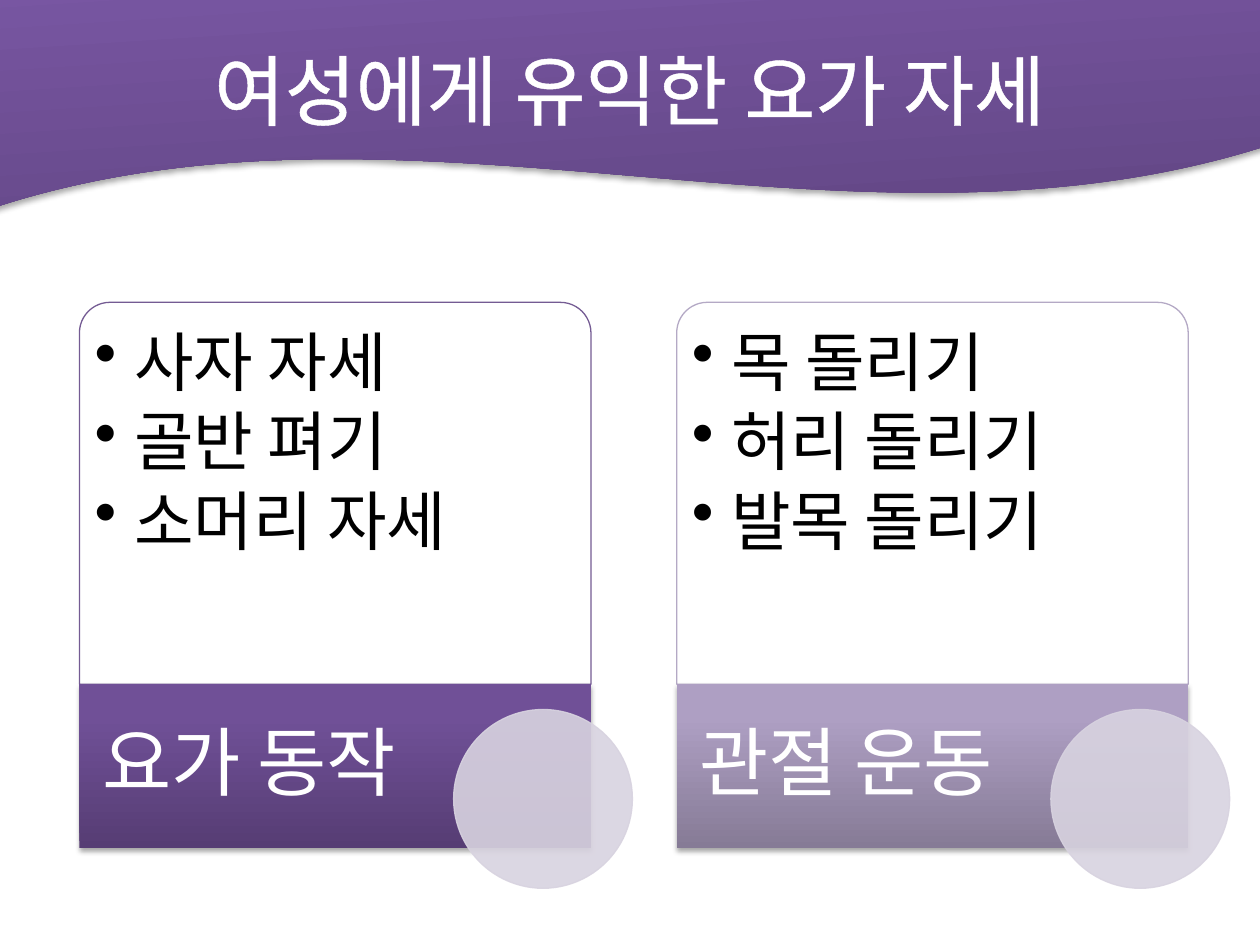
"""Build a slide with two cards of yoga poses under a purple wave title."""
from lxml import etree
from pptx import Presentation
from pptx.dml.color import RGBColor
from pptx.enum.shapes import MSO_SHAPE
from pptx.enum.text import MSO_ANCHOR, PP_ALIGN
from pptx.oxml import parse_xml
from pptx.oxml.ns import nsdecls, qn
from pptx.util import Pt

WAVE, RECT, OVAL = MSO_SHAPE.WAVE, MSO_SHAPE.RECTANGLE, MSO_SHAPE.OVAL
ROUND_TOP = MSO_SHAPE.ROUND_2_SAME_RECTANGLE
TOP, MIDDLE = MSO_ANCHOR.TOP, MSO_ANCHOR.MIDDLE
LEFT, CENTER = PP_ALIGN.LEFT, PP_ALIGN.CENTER
FONT = "Noto Sans CJK KR"
COLORS = {
    "white": "FFFFFF", "black": "000000", "circle": "D8D3E0",
    "purple_line": "745B93", "lilac_line": "B4A9C5",
}
GRADIENTS = {
    "wave": ("5F4480", "7B58A6", "7C57A8"),
    "purple": ("563D74", "705097", "704F99"),
    "lilac": ("867B96", "AE9FC3", "AE9FC4"),
}
CARDS = [
    ("purple", "요가 동작", ["사자 자세", "골반 펴기", "소머리 자세"]),
    ("lilac", "관절 운동", ["목 돌리기", "허리 돌리기", "발목 돌리기"]),
]
CARD_LEFT, CARD_STEP, CARD_W = 45.4, 341.3, 292.3
BODY_TOP, BODY_H, BAR_H = 172.8, 218.2, 93.6
CIRCLE = 102.2


def rgb(name):
    """Return the named colour."""
    return RGBColor.from_string(COLORS[name])


def add_shape(s, kind, x, y, w, h):
    """Add a preset shape without shadow or outline."""
    sp = s.shapes.add_shape(kind, Pt(x), Pt(y), Pt(w), Pt(h))
    sp.shadow.inherit = False
    sp.line.fill.background()
    return sp


def add_gradient_shape(s, kind, x, y, w, h, gradient):
    """Add a shape with a vertical gradient and a soft shadow below."""
    sp = add_shape(s, kind, x, y, w, h)
    stops = "".join(
        f'<a:gs pos="{pos}"><a:srgbClr val="{color}"/></a:gs>'
        for pos, color in zip((0, 80000, 100000), GRADIENTS[gradient]))
    pr = sp._element.spPr
    pr.find(qn("a:prstGeom")).addnext(parse_xml(
        f'<a:gradFill rotWithShape="1" {nsdecls("a")}><a:gsLst>{stops}</a:gsLst>'
        '<a:lin ang="16200000" scaled="0"/></a:gradFill>'))
    pr.find(qn("a:effectLst")).append(parse_xml(
        f'<a:outerShdw {nsdecls("a")} blurRad="{Pt(3.1)}" dist="{Pt(1.8)}" '
        'dir="5400000" rotWithShape="0"><a:srgbClr val="000000">'
        '<a:alpha val="35000"/></a:srgbClr></a:outerShdw>'))
    return sp


def add_clear_shape(s, kind, x, y, w, h, fill, line, clear_line=False):
    """Add an outlined shape whose fill is 90 percent opaque."""
    sp = add_shape(s, kind, x, y, w, h)
    sp.fill.solid()
    sp.fill.fore_color.rgb = rgb(fill)
    sp.line.color.rgb = rgb(line)
    sp.line.width = Pt(0.75)
    places = ["a:solidFill"] + ["a:ln/a:solidFill"] * clear_line
    for place in places:
        names = [qn(name) for name in f"{place}/a:srgbClr".split("/")]
        color = sp._element.spPr.find("/".join(names))
        etree.SubElement(color, qn("a:alpha"), val="90000")
    return sp


def add_text(s, lines, x, y, w, h, size, color="white", anchor=MIDDLE, align=LEFT,
             insets=(7.2, 3.6, 7.2, 3.6), spacing=None, after=0, bullet=False,
             outline=0):
    """Add a text box with one paragraph for each line."""
    tf = s.shapes.add_textbox(Pt(x), Pt(y), Pt(w), Pt(h)).text_frame
    tf.word_wrap = True
    tf.vertical_anchor = anchor
    (tf.margin_left, tf.margin_top,
     tf.margin_right, tf.margin_bottom) = map(Pt, insets)
    for i, line in enumerate(lines):
        p = tf.add_paragraph() if i else tf.paragraphs[0]
        p.alignment = align
        pr = p._p.get_or_add_pPr()
        if after:
            space = etree.SubElement(pr, qn("a:spcAft"))
            etree.SubElement(space, qn("a:spcPct"), val=str(after * 1000))
        if bullet:
            p.level = 1
            pr.set("marL", str(Pt(22.5)))
            pr.set("indent", str(-Pt(22.5)))
            etree.SubElement(pr, qn("a:buChar"), char="•")
        if spacing:
            p.line_spacing = spacing
        r = p.add_run()
        r.text = line
        r.font.size = Pt(size)
        r.font.color.rgb = rgb(color)
        r.font.name = FONT
        rpr = r._r.get_or_add_rPr()
        rpr.find(qn("a:latin")).addnext(
            parse_xml(f'<a:ea {nsdecls("a")} typeface="{FONT}"/>'))
        if outline:
            rpr.insert(0, parse_xml(
                f'<a:ln {nsdecls("a")} w="{Pt(outline)}"><a:solidFill>'
                f'<a:srgbClr val="{COLORS[color]}"/></a:solidFill></a:ln>'))


def add_card(s, x, theme, label, poses):
    """Add a card with a bulleted body, a label bar and a circle."""
    bar_top = BODY_TOP + BODY_H
    add_clear_shape(s, ROUND_TOP, x, BODY_TOP, CARD_W, BODY_H, "white",
                    f"{theme}_line").adjustments[0] = 0.08
    add_text(s, poses, x + 5.1, BODY_TOP + 5.1, CARD_W - 10.2, BODY_H - 5.1, 37,
             color="black", anchor=TOP, insets=(3.6, 10.8, 3.6, 3.6),
             spacing=0.9, after=15, bullet=True)
    add_gradient_shape(s, RECT, x, bar_top, CARD_W, BAR_H, theme)
    add_text(s, [label], x, bar_top, 205.9, BAR_H, 43, insets=(13, 0, 4.3, 0),
             spacing=0.9, after=35)
    add_clear_shape(s, OVAL, x + 213.8, bar_top + 14.4, CIRCLE, CIRCLE, "circle",
                    "circle", clear_line=True)


def main():
    """Build and save the slide."""
    prs = Presentation()
    prs.slide_width, prs.slide_height = Pt(720), Pt(540)
    s = prs.slides.add_slide(prs.slide_layouts[6])
    wave = add_gradient_shape(s, WAVE, -28.1, -61.9, 770.4, 185.8, "wave")
    wave.rotation = 356.3
    add_text(s, ["여성에게 유익한 요가 자세"], 36, 5.8, 648, 90, 44,
             align=CENTER, outline=1.45)
    for i, card in enumerate(CARDS):
        add_card(s, CARD_LEFT + i * CARD_STEP, *card)
    prs.save("out.pptx")


if __name__ == "__main__":
    main()
